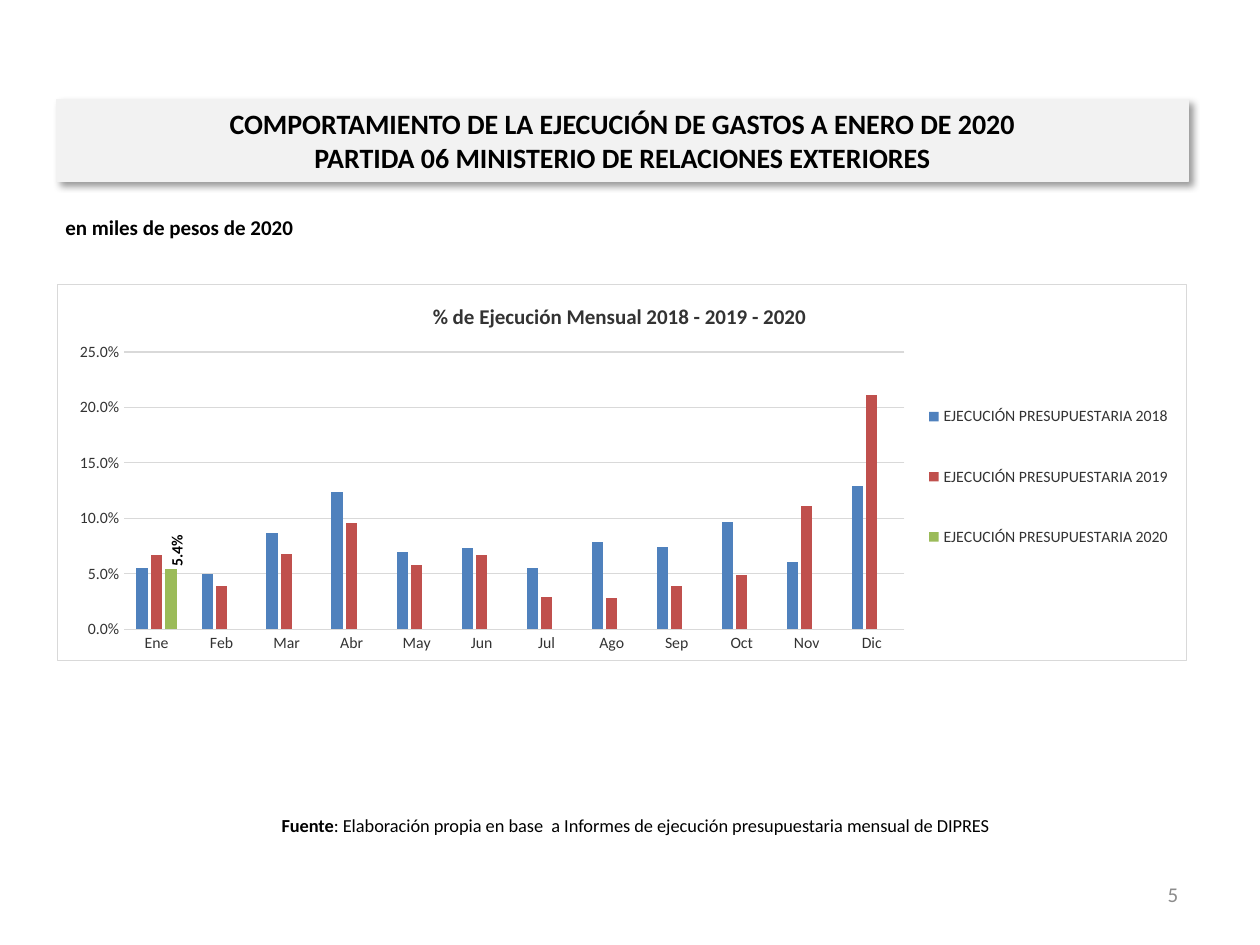
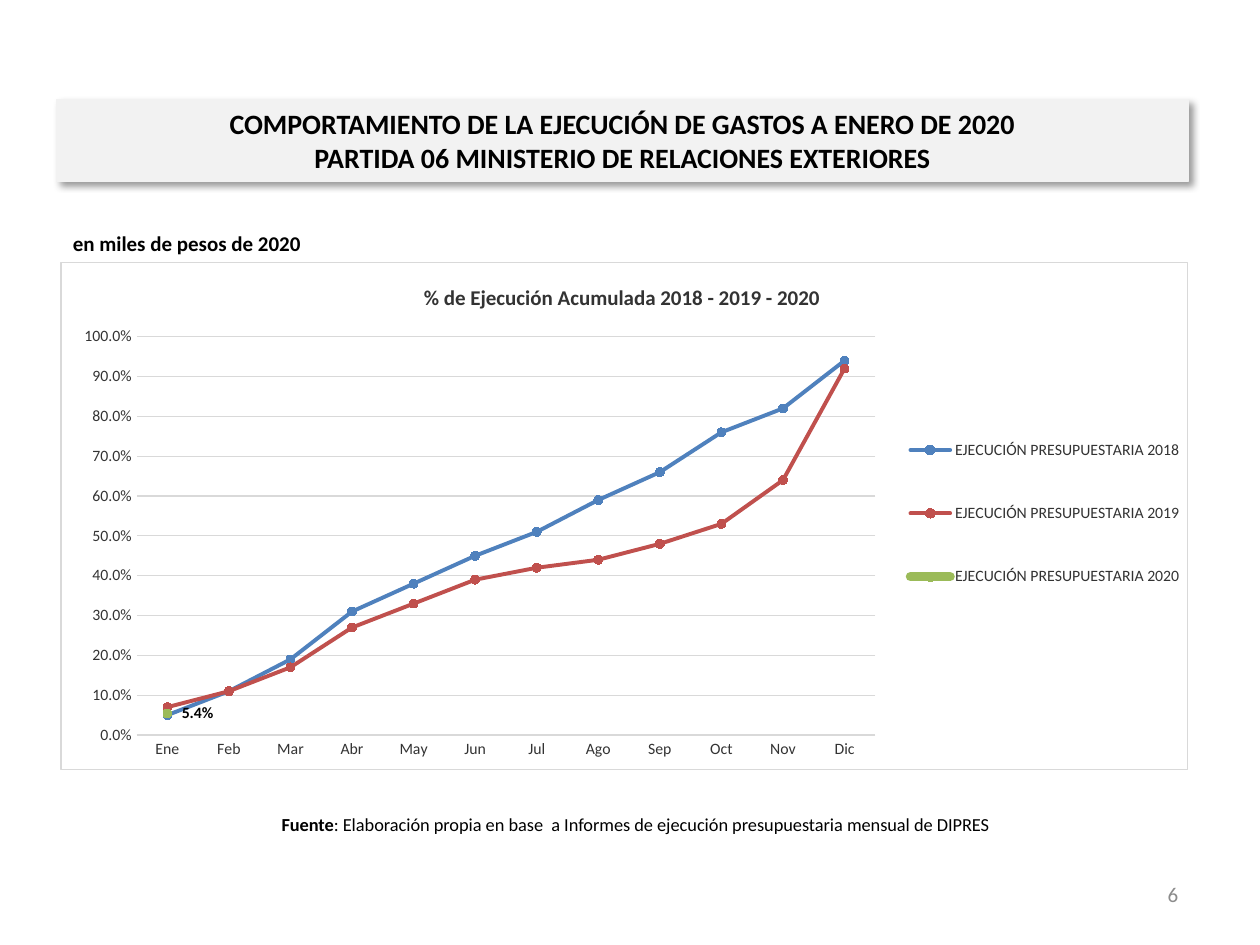
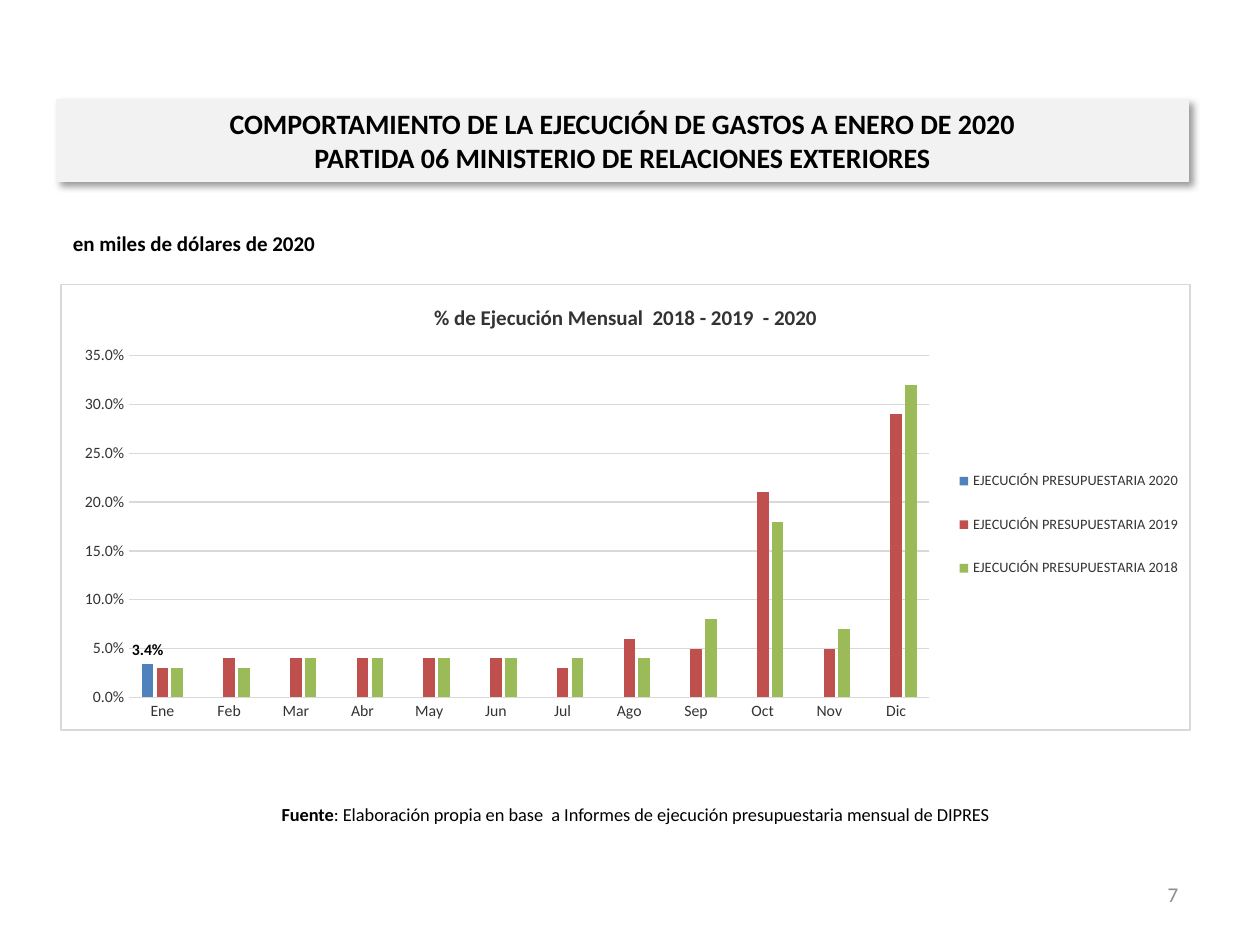
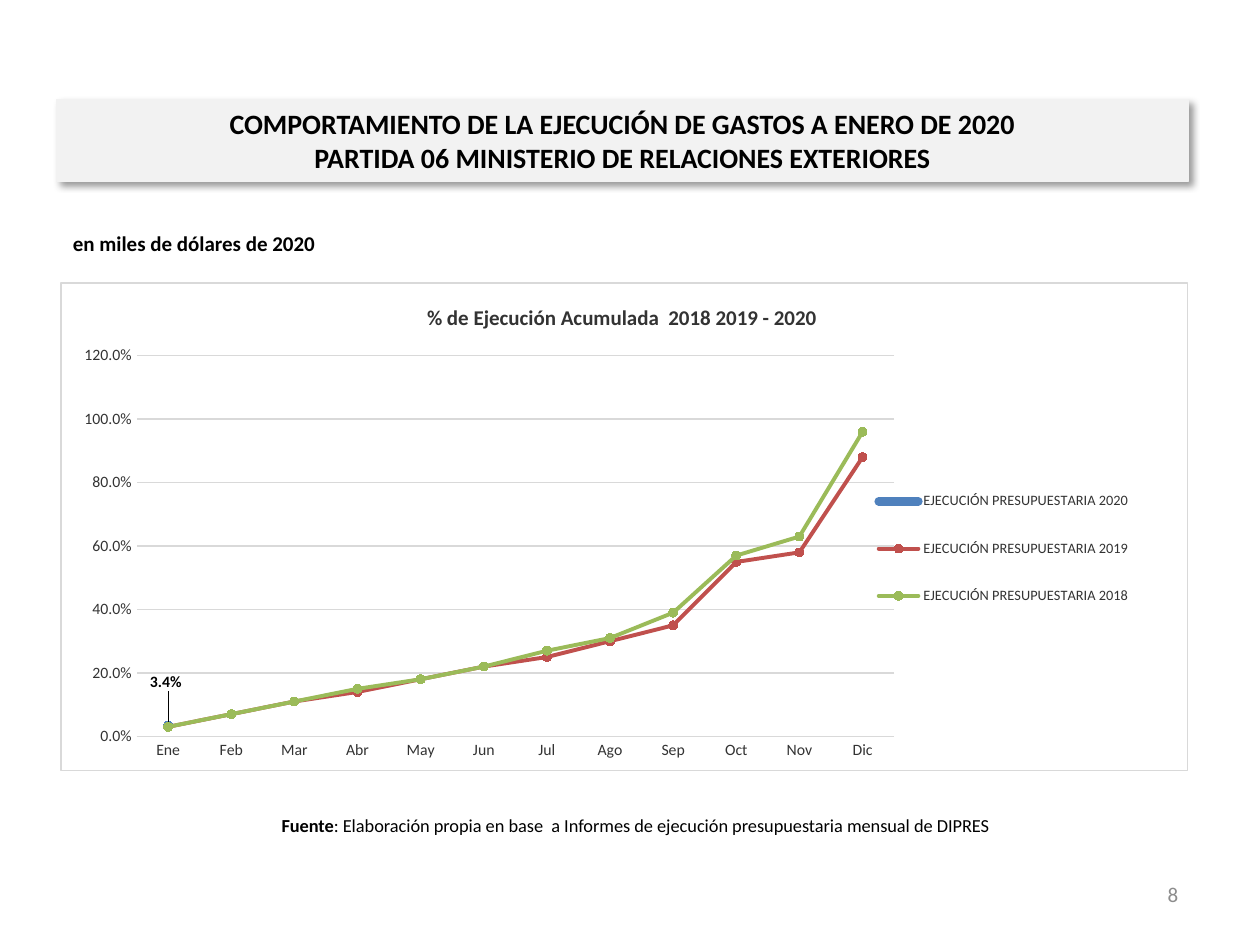
from dataclasses import dataclass

from pptx import Presentation
from pptx import util as u
from pptx.chart.data import CategoryChartData
from pptx.dml.color import RGBColor
from pptx.enum import chart as ch
from pptx.enum import text
from pptx.oxml import parse_xml
from pptx.oxml.ns import nsdecls, qn


@dataclass(frozen=True)
class Theme:
    font: str = "Calibri"
    black: str = "000000"
    axis_text: str = "333333"
    page_text: str = "8C8C8C"
    band: str = "F2F2F2"
    grid: str = "D9D9D9"
    paper: str = "FFFFFF"
    series: tuple = ("4F81BD", "C0504D", "9BBB59")
    title_size: float = 16
    head_size: float = 12
    source_size: float = 10.5
    chart_size: float = 10
    axis_size: float = 9
    hairline: float = 0.75
    curve: float = 2.25
    percent: str = "0.0%"


T = Theme()
MONTHS = "Ene Feb Mar Abr May Jun Jul Ago Sep Oct Nov Dic".split()
TITLE = ("COMPORTAMIENTO DE LA EJECUCIÓN DE GASTOS A ENERO DE 2020",
         "PARTIDA 06 MINISTERIO DE RELACIONES EXTERIORES")
SOURCE = ": Elaboración propia en base  a Informes de ejecución presupuestaria mensual de DIPRES"
COLUMN = ch.XL_CHART_TYPE.COLUMN_CLUSTERED
LINE = ch.XL_CHART_TYPE.LINE_MARKERS
LABEL = ch.XL_LABEL_POSITION

SLIDES = [
    dict(page=5, unit="en miles de pesos de 2020", unit_box=(0.42, 1.65, 9, 0.4), source_top=6.35,
         kind=COLUMN, box=(0.45, 2.25, 8.97, 3), title="% de Ejecución Mensual 2018 - 2019 - 2020 ",
         top=0.25, step=0.05, plot=(0.53, 0.54, 6.2, 2.21), legend=(6.89, 0.65, 1.97, 1.77),
         legend_size=9, label_at=LABEL.OUTSIDE_END, label_turn=-90, label_shift=(0.05, 0.02),
         data={2018: [0.055, 0.05, 0.087, 0.124, 0.07, 0.073, 0.055, 0.079, 0.074, 0.097, 0.061, 0.129],
               2019: [0.067, 0.039, 0.068, 0.096, 0.058, 0.067, 0.029, 0.028, 0.039, 0.049, 0.111, 0.211],
               2020: [0.054]}),
    dict(page=6, unit="en miles de pesos de 2020", unit_box=(0.48, 1.78, 2.04, 0.3), source_top=6.34,
         kind=LINE, box=(0.48, 2.08, 8.95, 4.03), title="% de Ejecución Acumulada 2018 - 2019 - 2020 ",
         top=1, step=0.1, plot=(0.6, 0.59, 5.87, 3.17), legend=(6.74, 1.06, 2.19, 1.87),
         legend_size=9, label_at=LABEL.RIGHT, label_shift=(0.04, 0), short_width=7,
         data={2018: [0.05, 0.11, 0.19, 0.31, 0.38, 0.45, 0.51, 0.59, 0.66, 0.76, 0.82, 0.94],
               2019: [0.07, 0.11, 0.17, 0.27, 0.33, 0.39, 0.42, 0.44, 0.48, 0.53, 0.64, 0.92],
               2020: [0.054]}),
    dict(page=7, unit="en miles de dólares de 2020", unit_box=(0.48, 1.78, 2.15, 0.3), source_top=6.26,
         kind=COLUMN, box=(0.48, 2.25, 8.97, 3.55), title="% de Ejecución Mensual  2018 - 2019  - 2020",
         top=0.35, step=0.05, plot=(0.54, 0.57, 6.36, 2.72), legend=(7.09, 1.29, 1.84, 1.25),
         legend_size=8.2, label_at=LABEL.OUTSIDE_END,
         data={2020: [0.034],
               2019: [0.03, 0.04, 0.04, 0.04, 0.04, 0.04, 0.03, 0.06, 0.05, 0.21, 0.05, 0.29],
               2018: [0.03, 0.03, 0.04, 0.04, 0.04, 0.04, 0.04, 0.04, 0.08, 0.18, 0.07, 0.32]}),
    dict(page=8, unit="en miles de dólares de 2020", unit_box=(0.48, 1.78, 2.15, 0.3), source_top=6.35,
         kind=LINE, box=(0.48, 2.24, 8.95, 3.88), title="% de Ejecución Acumulada  2018 2019 - 2020 ",
         top=1.2, step=0.2, plot=(0.6, 0.58, 6.02, 3.03), legend=(6.46, 1.43, 2.06, 1.37),
         legend_size=8.2, label_at=LABEL.ABOVE, label_shift=(-0.02, -0.2), short_width=8,
         data={2020: [0.034],
               2019: [0.03, 0.07, 0.11, 0.14, 0.18, 0.22, 0.25, 0.3, 0.35, 0.55, 0.58, 0.88],
               2018: [0.03, 0.07, 0.11, 0.15, 0.18, 0.22, 0.27, 0.31, 0.39, 0.57, 0.63, 0.96]}),
]


def rgb(color):
    return RGBColor.from_string(color)


def style_font(font, size, color, bold=False):
    font.name, font.size, font.bold = T.font, u.Pt(size), bold
    font.color.rgb = rgb(color)


def add_run(p, words, size, color=T.black, bold=False):
    r = p.add_run()
    r.text = words
    style_font(r.font, size, color, bold)


def add_text(s, box, runs, size, align=None, color=T.black, anchor=text.MSO_ANCHOR.TOP, wrap=True):
    tf = s.shapes.add_textbox(*map(u.Inches, box)).text_frame
    tf.word_wrap, tf.vertical_anchor = wrap, anchor
    p = tf.paragraphs[0]
    p.alignment = align
    for words, bold in runs:
        add_run(p, words, size, color, bold)


def title_band(s, box):
    sp = s.shapes.title
    sp.left, sp.top, sp.width, sp.height = map(u.Inches, box)
    sp.fill.solid()
    sp.fill.fore_color.rgb = rgb(T.band)
    sp.line.color.rgb = rgb(T.band)
    sp.line.width = u.Pt(T.hairline)
    sp.element.spPr.append(parse_xml(
        f'<a:effectLst {nsdecls("a")}><a:outerShdw blurRad="{u.Pt(4)}" dist="{u.Pt(3)}" '
        f'dir="2700000" algn="tl" rotWithShape="0"><a:srgbClr val="{T.black}">'
        '<a:alpha val="40000"/></a:srgbClr></a:outerShdw></a:effectLst>'))
    tf = sp.text_frame
    tf.word_wrap, tf.vertical_anchor = True, text.MSO_ANCHOR.MIDDLE
    tf.auto_size = text.MSO_AUTO_SIZE.NONE
    tf.margin_left = tf.margin_right = u.Inches(0.11)
    p = tf.paragraphs[0]
    p.alignment = text.PP_ALIGN.CENTER
    add_run(p, TITLE[0], T.title_size, bold=True)
    p.add_line_break()
    add_run(p, TITLE[1], T.title_size, bold=True)


def manual_layout(part, size, inner=False, edge=True):
    target = '<c:layoutTarget val="inner"/>' if inner else ""
    modes = "".join(f'<c:{k}Mode val="edge"/>' for k in "xy") if edge else ""
    values = "".join(f'<c:{k} val="{v / whole:.4f}"/>' for k, v, whole in zip("xywh", part, size * 2))
    return parse_xml(f'<c:layout {nsdecls("c")}><c:manualLayout>{target}{modes}{values}'
                     '</c:manualLayout></c:layout>')


def place_parts(chart, size, plot, legend):
    area = chart.element.find(".//" + qn("c:plotArea"))
    key = chart.element.find(".//" + qn("c:legend"))
    for parent in (area, key):
        for old in parent.findall(qn("c:layout")):
            parent.remove(old)
    area.insert(0, manual_layout(plot, size, inner=True))
    key.find(qn("c:legendPos")).addnext(manual_layout(legend, size))


def frame_chart(chart):
    chart.element.find(qn("c:chart")).addnext(parse_xml(
        f'<c:spPr {nsdecls("c", "a")}><a:solidFill><a:srgbClr val="{T.paper}"/></a:solidFill>'
        f'<a:ln w="{u.Pt(T.hairline)}"><a:solidFill><a:srgbClr val="{T.grid}"/></a:solidFill></a:ln></c:spPr>'))


def style_axes(chart, top, step):
    cat, val = chart.category_axis, chart.value_axis
    for axis in (cat, val):
        axis.major_tick_mark = axis.minor_tick_mark = ch.XL_TICK_MARK.NONE
        style_font(axis.tick_labels.font, T.axis_size, T.axis_text)
    val.minimum_scale, val.maximum_scale, val.major_unit = 0, top, step
    val.tick_labels.number_format = T.percent
    val.tick_labels.number_format_is_linked = False
    val.format.line.fill.background()
    for line in (cat.format.line, val.major_gridlines.format.line):
        line.color.rgb = rgb(T.grid)
        line.width = u.Pt(T.hairline)


def hide_leader_lines(labels):
    labels.append(parse_xml(
        f'<c:extLst {nsdecls("c")}><c:ext uri="{{CE6537A1-D6FC-4f65-9D91-7224C49458BB}}" '
        'xmlns:c15="http://schemas.microsoft.com/office/drawing/2012/chart">'
        '<c15:showLeaderLines val="0"/></c:ext></c:extLst>'))


def label_series(chart, series, d):
    labels = series.data_labels
    labels.show_value = True
    labels.number_format, labels.number_format_is_linked = T.percent, False
    labels.position = d["label_at"]
    style_font(labels.font, T.axis_size, T.black, True)
    root = chart.element.find(".//" + qn("c:dLbls"))
    if "label_shift" in d:
        label = series.points[0].data_label
        style_font(label.font, T.axis_size, T.black, True)
        label.position = d["label_at"]
        root.find(qn("c:dLbl")).insert(1, manual_layout(d["label_shift"], d["box"][2:], edge=False))
        hide_leader_lines(root)
    if "label_turn" in d:
        for body in root.iter(qn("a:bodyPr")):
            body.set("rot", str(d["label_turn"] * 60000))
            body.set("vert", "horz")


def style_series(series, color, kind, width):
    if kind == COLUMN:
        series.format.fill.solid()
        series.format.fill.fore_color.rgb = rgb(color)
        return
    series.smooth = False
    series.format.line.color.rgb = rgb(color)
    series.format.line.width = u.Pt(width)
    marker = series.marker
    marker.style, marker.size = ch.XL_MARKER_STYLE.CIRCLE, 5
    marker.format.fill.solid()
    marker.format.fill.fore_color.rgb = rgb(color)
    marker.format.line.color.rgb = rgb(color)


def execution_chart(s, d):
    data = CategoryChartData(number_format=T.percent)
    data.categories = MONTHS
    for year, values in d["data"].items():
        data.add_series(f"EJECUCIÓN PRESUPUESTARIA {year}", values)
    chart = s.shapes.add_chart(d["kind"], *map(u.Inches, d["box"]), data).chart
    style_font(chart.font, T.chart_size, T.black)
    chart.has_title = True
    add_run(chart.chart_title.text_frame.paragraphs[0], d["title"], T.head_size, T.axis_text, True)
    chart.chart_title.include_in_layout = False
    chart.has_legend = True
    chart.legend.position = ch.XL_LEGEND_POSITION.RIGHT
    chart.legend.include_in_layout = False
    style_font(chart.legend.font, d["legend_size"], T.axis_text)
    style_axes(chart, d["top"], d["step"])
    plot = chart.plots[0]
    plot.vary_by_categories = False
    if d["kind"] == COLUMN:
        plot.gap_width, plot.overlap = 219, -27
    for series, color, values in zip(plot.series, T.series, d["data"].values()):
        single = len(values) == 1
        style_series(series, color, d["kind"], d.get("short_width") if single else T.curve)
        if single:
            label_series(chart, series, d)
    for ln in chart.element.findall(".//" + qn("c:ser") + "/" + qn("c:spPr") + "/" + qn("a:ln")):
        ln.set("cap", "rnd")
    place_parts(chart, d["box"][2:], d["plot"], d["legend"])
    frame_chart(chart)


def chart_slide(prs, d):
    s = prs.slides.add_slide(prs.slide_layouts[5])
    middle = text.MSO_ANCHOR.MIDDLE
    title_band(s, (0.45, 0.79, 8.98, 0.65))
    add_text(s, d["unit_box"], [(d["unit"], True)], T.head_size, wrap=d["unit_box"][2] > 3)
    execution_chart(s, d)
    add_text(s, (0.45, d["source_top"], 9.19, 0.4), [("Fuente", True), (SOURCE, False)],
             T.source_size, text.PP_ALIGN.CENTER, anchor=middle)
    add_text(s, (7.12, 6.9, 2.33, 0.4), [(str(d["page"]), False)], T.head_size,
             text.PP_ALIGN.RIGHT, T.page_text, middle)


def main():
    prs = Presentation()
    prs.slide_width, prs.slide_height = u.Inches(10), u.Inches(7.5)
    for d in SLIDES:
        chart_slide(prs, d)
    prs.save("out.pptx")


if __name__ == "__main__":
    main()
